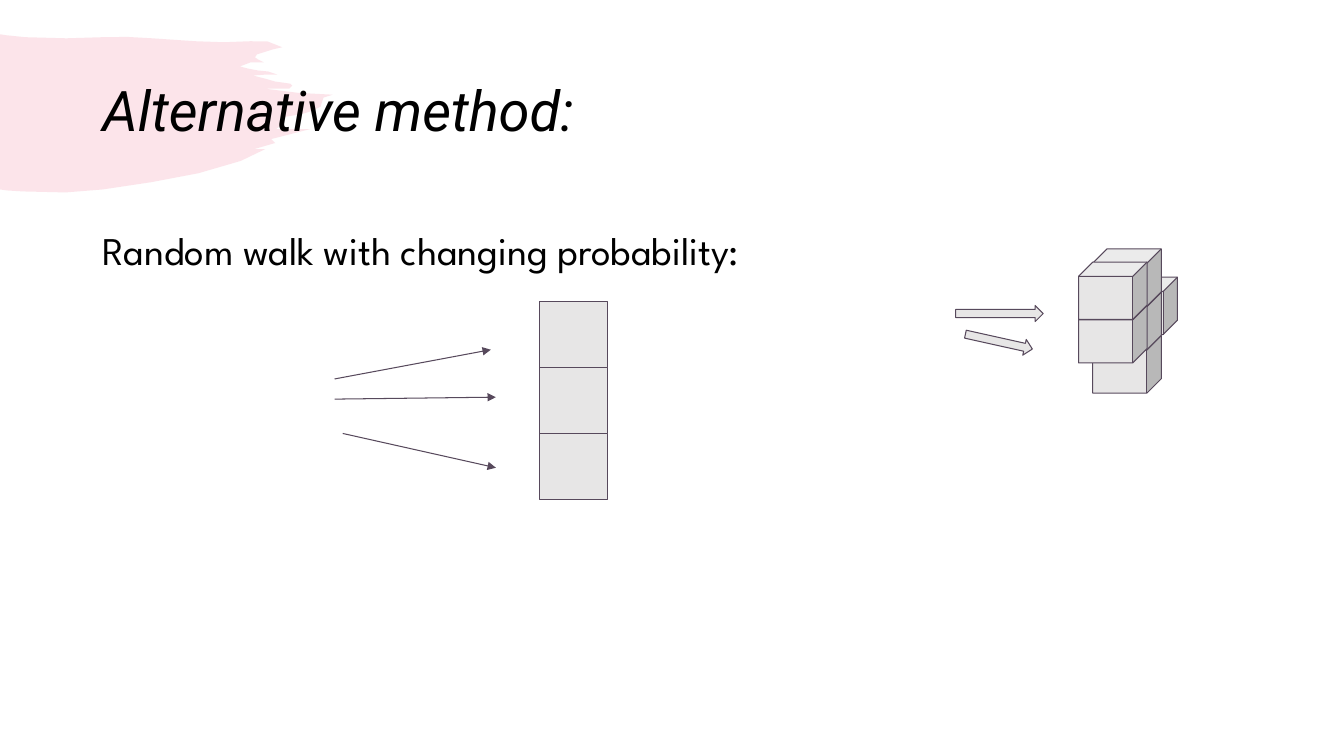
from lxml import etree
from pptx import Presentation
from pptx import util as u
from pptx.dml.color import RGBColor
from pptx.enum import shapes, text
from pptx.oxml import ns

Pt = u.Pt
SHAPE = shapes.MSO_SHAPE


def color(value):
    return RGBColor.from_string(value)


def add_xml(parent, tag, **attrs):
    return etree.SubElement(parent, ns.qn(tag), attrs)


class Deck:
    fill = "E7E6E6"
    ink = "57495C"
    text_color = "000000"
    line_width = 0.75

    def __init__(self, width, height):
        self.prs = Presentation()
        self.prs.slide_width, self.prs.slide_height = Pt(width), Pt(height)
        self.s = self.prs.slides.add_slide(self.prs.slide_layouts[5])

    def outline(self, line):
        line.color.rgb = color(self.ink)
        line.width = Pt(self.line_width)

    def set_text(self, sp, words, font, anchor, **para):
        tf = sp.text_frame
        frame = dict(word_wrap=True, auto_size=text.MSO_AUTO_SIZE.NONE,
                     vertical_anchor=anchor,
                     margin_left=Pt(7.2), margin_right=Pt(7.2),
                     margin_top=Pt(3.6), margin_bottom=Pt(3.6))
        for name, value in frame.items():
            setattr(tf, name, value)
        p = tf.paragraphs[0]
        for name, value in dict(alignment=text.PP_ALIGN.LEFT, **para).items():
            setattr(p, name, value)
        r = p.add_run()
        r.text = words
        for name, value in font.items():
            setattr(r.font, name, value)
        r.font.color.rgb = color(self.text_color)

    def title(self, words, x, y, w, h, **font):
        sp = self.s.shapes.title
        sp.left, sp.top, sp.width, sp.height = map(Pt, (x, y, w, h))
        self.set_text(sp, words, font, text.MSO_ANCHOR.MIDDLE, line_spacing=0.9)

    def body(self, words, x, y, w, h, **font):
        sp = self.s.shapes.add_textbox(*map(Pt, (x, y, w, h)))
        self.set_text(sp, words, font, text.MSO_ANCHOR.TOP, space_before=Pt(10))

    def shape(self, kind, x, y, w, h, rotation=0):
        sp = self.s.shapes.add_shape(kind, *map(Pt, (x, y, w, h)))
        sp.shadow.inherit = False
        sp.rotation = rotation
        sp.fill.solid()
        sp.fill.fore_color.rgb = color(self.fill)
        self.outline(sp.line)

    def arrow(self, x1, y1, x2, y2):
        line = self.s.shapes.add_connector(
            shapes.MSO_CONNECTOR.STRAIGHT, *map(Pt, (x1, y1, x2, y2)))
        self.outline(line.line)
        sp_pr = line._element.spPr
        add_xml(sp_pr.find(ns.qn("a:ln")), "a:tailEnd", type="triangle")
        add_xml(sp_pr, "a:effectLst")

    def brush(self, points, fill, alpha):
        points = [(Pt(x), Pt(y)) for x, y in points]
        builder = self.s.shapes.build_freeform(*points[0], scale=1.0)
        builder.add_line_segments(points[1:], close=True)
        sp = builder.convert_to_shape()
        sp.shadow.inherit = False
        sp.fill.solid()
        sp.fill.fore_color.rgb = color(fill)
        srgb = sp._element.spPr.find(".//" + ns.qn("a:srgbClr"))
        add_xml(srgb, "a:alpha", val=str(alpha * 1000))
        sp.line.fill.background()
        self.s.shapes._spTree.insert(2, sp._element)


BRUSH = [
    (0, 24.5), (4.3, 25.2), (18, 26.6), (47.5, 27.4), (73.4, 26.6),
    (91, 26.4), (108.7, 27.4), (139.7, 29.5), (160, 30.2), (178.6, 29.5),
    (191, 29.6), (201.6, 33.8), (195.1, 35.3), (183.6, 38.9), (182.2, 41),
    (184.3, 42.5), (188.6, 44.6), (179, 44.6), (171.4, 47.5), (177.1, 49),
    (184.3, 50.4), (191.5, 51.1), (198, 53.3), (189, 53.4), (180.7, 54),
    (189.4, 56.2), (196.6, 58.3), (201.6, 59), (207.4, 59.8), (208.8, 61.2),
    (206.6, 63.4), (204.5, 63.4), (189.4, 63.4), (213, 66.4), (237.6, 67.7),
    (231.1, 69.8), (229, 76.3), (221, 79.9), (216, 81.4), (203.8, 83.5),
    (201.6, 86.4), (200.2, 90), (197.3, 92.2), (221.8, 92.2), (193.7, 99.4),
    (196.6, 102.2), (181.4, 106.6), (189.4, 106.6), (172, 115),
    (141.8, 123.8), (108, 130.2), (73.4, 135.4), (46.8, 137.5),
    (16.6, 136.8), (5, 136.1), (0, 135.4),
]
WALK_ARROWS = [(239, 285.1, 354.2, 283.7), (239, 270.7, 350.6, 249.8),
               (244.8, 309.6, 354.2, 334.1)]
CUBES = [(792, 198), (780.5, 239.8), (780.5, 208.8),
         (770.4, 218.2), (780.5, 177.8), (770.4, 187.2)]
CELL_STEP = 47.15


def main():
    deck = Deck(960, 540)
    deck.brush(BRUSH, "F07C98", 20)
    deck.title("Alternative method:", 66, 28.75, 828, 104.4,
               name="Roboto", size=Pt(40), italic=True)
    deck.body("Random walk with changing probability:", 66, 158.4, 828, 327.6,
              name="League Spartan", size=Pt(28))
    for row in range(3):
        deck.shape(SHAPE.RECTANGLE, 385.2, 215.2 + row * CELL_STEP, 49, CELL_STEP)
    for ends in WALK_ARROWS:
        deck.arrow(*ends)
    for x, y in CUBES:
        deck.shape(SHAPE.CUBE, x, y, 49, 41)
    deck.shape(SHAPE.RIGHT_ARROW, 682.6, 218.2, 62.6, 11.5)
    deck.shape(SHAPE.RIGHT_ARROW, 689, 238.3, 49, 11.5, rotation=12.5)
    deck.prs.save("out.pptx")


if __name__ == "__main__":
    main()
